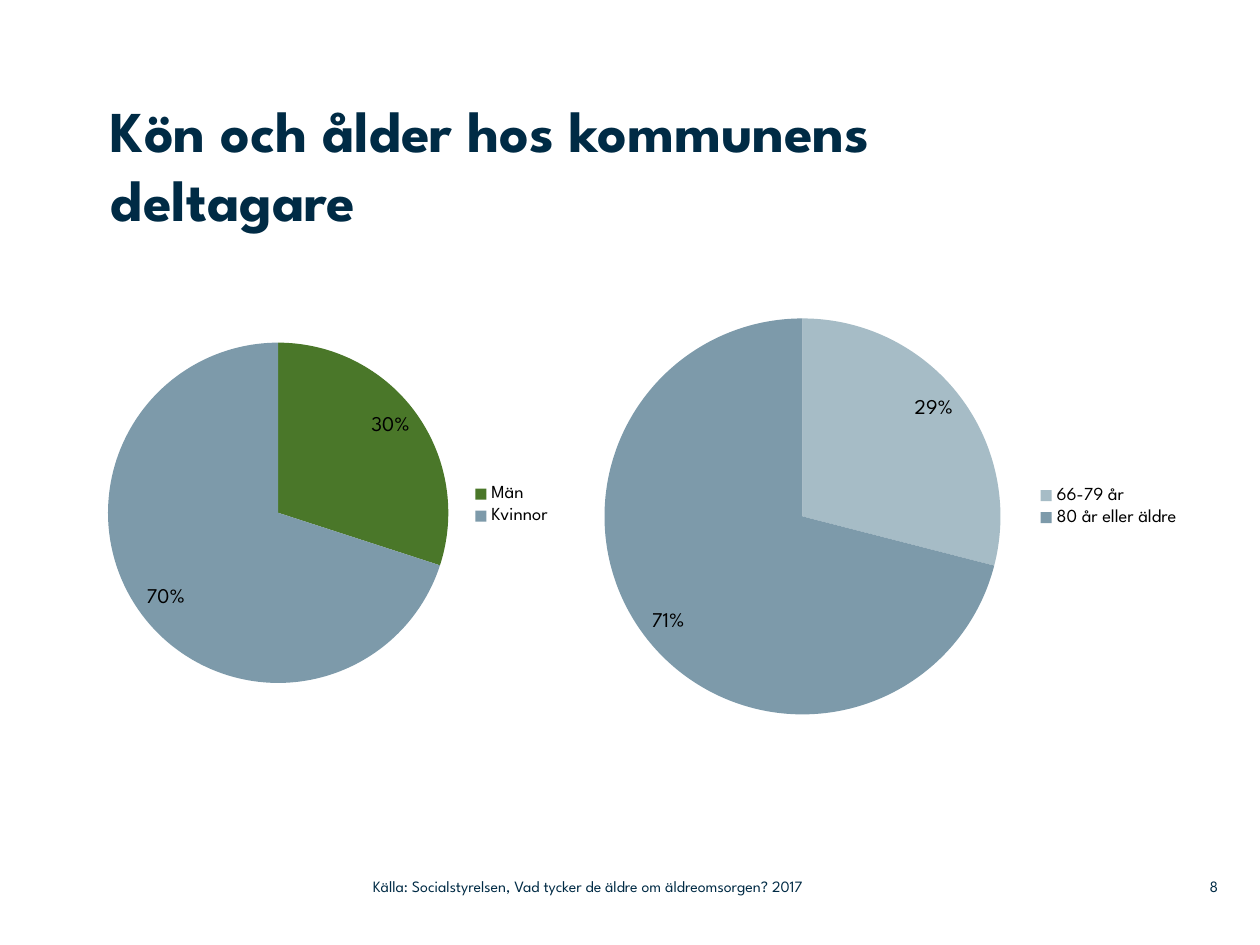
"""Build a slide with two pie charts showing participants by sex and age."""
import pptx
import pptx.chart.data
import pptx.dml.color
import pptx.enum.chart
import pptx.enum.text
import pptx.util
import lxml.etree

Pt = pptx.util.Pt
ALIGN = pptx.enum.text.PP_ALIGN
ANCHOR = pptx.enum.text.MSO_ANCHOR

FONT = "League Spartan"
COLORS = {"navy": "002B45", "black": "000000", "green": "4A7729",
          "blue": "7D9AAA", "pale": "A6BCC6"}

TEXTS = [
    ("Kön och ålder hos kommunens deltagare", (63.4, 54, 547.2, 102.2), 33, True,
     ALIGN.LEFT, ANCHOR.TOP),
    ("Källa: Socialstyrelsen, Vad tycker de äldre om äldreomsorgen? 2017",
     (213.1, 496.1, 319, 20.9), 9, False, ALIGN.LEFT, ANCHOR.MIDDLE),
    ("8", (662.4, 496.1, 33.8, 20.9), 9, False, ALIGN.RIGHT, ANCHOR.MIDDLE),
]

CHART_SIZE = (390.2, 246.2)
PIES = [
    {"place": (-16.6, 166.3),
     "shares": [("Män", 30, "green"), ("Kvinnor", 70, "blue")],
     "plot": {"x": 0.2, "y": 0.12, "w": 0.5, "h": 0.79},
     "legend": {"x": 0.73, "y": 0.44}},
    {"place": (310.3, 172.1),
     "shares": [("66-79 år", 29, "pale"), ("80 år eller äldre", 71, "blue")],
     "plot": {"x": 0.09, "y": 0.04, "w": 0.58, "h": 0.92},
     "legend": {"x": 0.72, "y": 0.42}},
]


def rgb(name):
    return pptx.dml.color.RGBColor.from_string(COLORS[name])


def style(font, size, color, bold=False):
    font.name, font.size, font.bold = FONT, Pt(size), bold
    font.color.rgb = rgb(color)


def add_text(slide, wording, box, size, bold, align, anchor):
    frame = slide.shapes.add_textbox(*map(Pt, box)).text_frame
    frame.word_wrap = True
    frame.vertical_anchor = anchor
    frame.margin_left = frame.margin_right = frame.margin_top = frame.margin_bottom = 0
    paragraph = frame.paragraphs[0]
    paragraph.alignment = align
    run = paragraph.add_run()
    run.text = wording
    style(run.font, size, "navy", bold)


def set_layout(parent, position, target=None):
    namespace = "{http://schemas.openxmlformats.org/drawingml/2006/chart}"
    for old in parent.findall(namespace + "layout"):
        parent.remove(old)
    layout = lxml.etree.Element(namespace + "layout")
    manual = lxml.etree.SubElement(layout, namespace + "manualLayout")
    settings = [("layoutTarget", target)] if target else []
    settings += [("xMode", "edge"), ("yMode", "edge"), *position.items()]
    for tag, value in settings:
        lxml.etree.SubElement(manual, namespace + tag, val=str(value))
    legend_position = parent.find(namespace + "legendPos")
    parent.insert(0 if legend_position is None else 1, layout)


def add_pie(slide, pie):
    names, values, fills = zip(*pie["shares"])
    data = pptx.chart.data.CategoryChartData()
    data.categories = names
    data.add_series("Series 1", values)
    chart = slide.shapes.add_chart(
        pptx.enum.chart.XL_CHART_TYPE.PIE,
        *map(Pt, pie["place"] + CHART_SIZE), data).chart
    style(chart.font, 10, "black")
    chart.has_title = False
    chart.has_legend = True
    chart.legend.position = pptx.enum.chart.XL_LEGEND_POSITION.RIGHT
    chart.legend.include_in_layout = False
    style(chart.legend.font, 10.5, "black")
    plot = chart.plots[0]
    plot.vary_by_categories = True
    for index, fill in enumerate(fills):
        point = plot.series[0].points[index].format
        point.fill.solid()
        point.fill.fore_color.rgb = rgb(fill)
        point.line.fill.background()
    labels = plot.series[0].data_labels
    labels.show_percentage, labels.show_value = True, False
    labels.number_format, labels.number_format_is_linked = "0%", False
    labels.position = pptx.enum.chart.XL_LABEL_POSITION.INSIDE_END
    style(labels.font, 12, "black")
    plot_area = chart.element.chart.plotArea
    set_layout(plot_area, pie["plot"], "inner")
    set_layout(chart.element.chart.find(plot_area.tag.replace("plotArea", "legend")),
               pie["legend"])


def main():
    deck = pptx.Presentation()
    deck.slide_width, deck.slide_height = Pt(720), Pt(540)
    slide = deck.slides.add_slide(deck.slide_layouts[6])
    for text in TEXTS:
        add_text(slide, *text)
    for pie in PIES:
        add_pie(slide, pie)
    deck.save("out.pptx")


if __name__ == "__main__":
    main()
